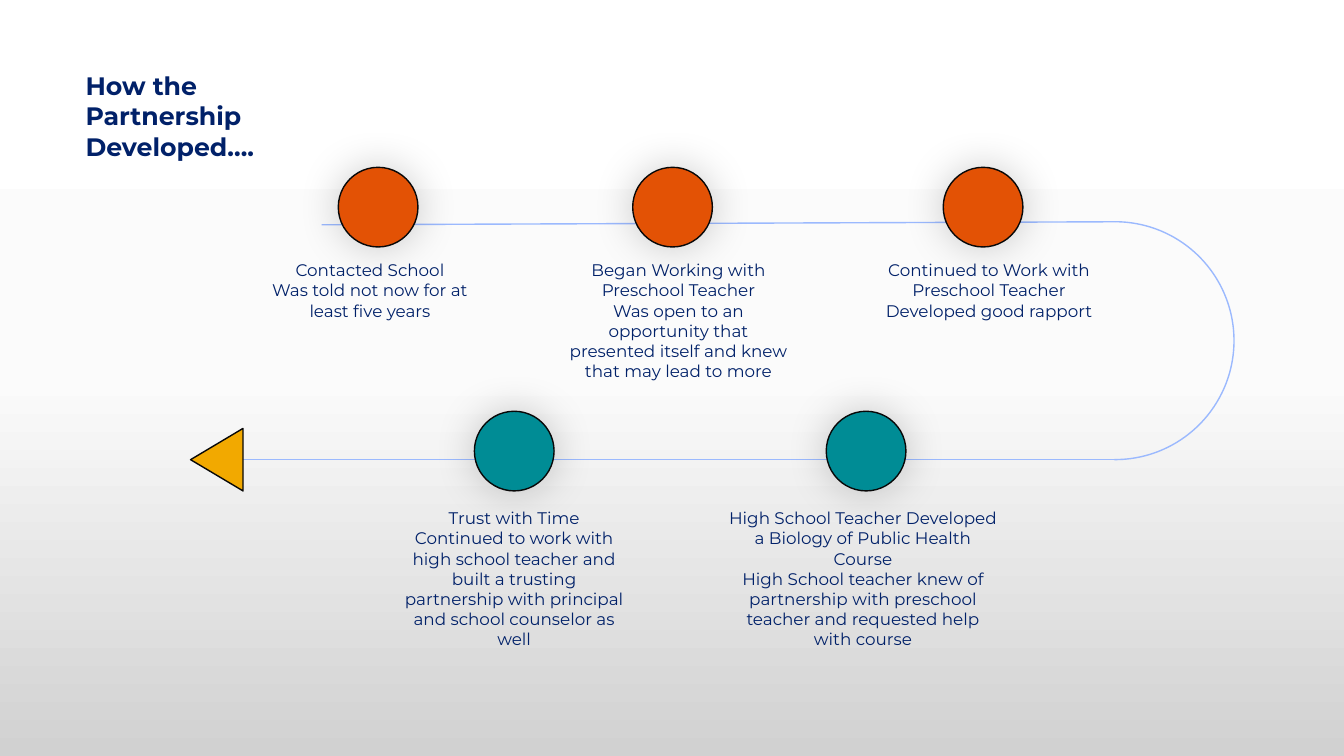
from copy import deepcopy
from lxml import etree
from pptx import Presentation
from pptx.dml.color import RGBColor
from pptx.enum.shapes import MSO_CONNECTOR, MSO_SHAPE
from pptx.enum.text import MSO_AUTO_SIZE, PP_ALIGN
from pptx.oxml.ns import qn
from pptx.util import Inches, Pt

ARC, CIRCLE, TRIANGLE = MSO_SHAPE.ARC, MSO_SHAPE.OVAL, MSO_SHAPE.ISOSCELES_TRIANGLE
STRAIGHT = MSO_CONNECTOR.STRAIGHT
LEFT, CENTER = PP_ALIGN.LEFT, PP_ALIGN.CENTER
FIT_SHAPE = MSO_AUTO_SIZE.SHAPE_TO_FIT_TEXT

# Content
FONT = "Montserrat"
COLORS = {"navy": "012169", "orange": "E35205", "teal": "008C95", "gold": "F2A900",
          "path": "9BB9FE", "outline": "080808", "shadow": "000000"}
BACKGROUND = [(0, "FFFFFF"), (0.5, "FBFBFB"), (1, "D1D1D1")]
TITLE = ["How the", "Partnership", "Developed…."]

# Each row: circle colour, circle top, text top, and its steps.
# Each step: circle centre, text centre, text width, text height, lines
ROWS = [
    ("orange", 1.66, 2.53, [
        (3.75, 3.67, 2.44, 0.91, ["Contacted School",
                                  "Was told not now for at least five years"]),
        (6.67, 6.73, 2.44, 1.31, ["Began Working with Preschool Teacher",
                                  "Was open to an opportunity that presented itself "
                                  "and knew that may lead to more"]),
        (9.75, 9.81, 2.44, 0.71, ["Continued to Work with Preschool Teacher",
                                  "Developed good rapport"]),
    ]),
    ("teal", 4.08, 4.99, [
        (5.1, 5.1, 2.44, 1.51, ["Trust with Time",
                                "Continued to work with high school teacher and built a "
                                "trusting partnership with principal and school "
                                "counselor as well"]),
        (8.59, 8.56, 2.86, 1.51, ["High School Teacher Developed a Biology of Public "
                                  "Health Course",
                                  "High School teacher knew of partnership with preschool "
                                  "teacher and requested help with course"]),
    ]),
]

# Geometry in inches
CIRCLE_SIZE = 0.79
TURN_X, TURN_TOP, TURN_SIZE = 11.06, 2.2, 2.36
TURN_BOTTOM = TURN_TOP + TURN_SIZE
TOP_START = (3.19, 2.23)
ARROW_BASE_X, ARROW_WIDTH, ARROW_HEIGHT = 2.41, 0.62, 0.52

deck = Presentation()
deck.slide_width, deck.slide_height = Inches(13.33), Inches(7.5)
page = deck.slides.add_slide(deck.slide_layouts[6])


def color(name):
    return RGBColor.from_string(COLORS[name])


def add_shape(kind, left, top, width, height, line, fill=None):
    shape = page.shapes.add_shape(kind, Inches(left), Inches(top),
                                  Inches(width), Inches(height))
    shape.shadow.inherit = False
    shape.line.color.rgb = color(line)
    shape.line.width = Pt(1)
    if fill:
        shape.fill.solid()
        shape.fill.fore_color.rgb = color(fill)
    else:
        shape.fill.background()
    return shape


def add_glow_shadow(shape):
    effects = shape.element.spPr.find(qn("a:effectLst"))
    shadow = etree.SubElement(effects, qn("a:outerShdw"), blurRad=str(Pt(30)),
                              dist="0", dir="0", algn="ctr", rotWithShape="0")
    tint = etree.SubElement(shadow, qn("a:srgbClr"), val=COLORS["shadow"])
    etree.SubElement(tint, qn("a:alpha"), val="20000")


def add_line(start, end):
    line = page.shapes.add_connector(STRAIGHT, *map(Inches, start + end))
    line.line.color.rgb = color("path")
    line.line.width = Pt(1)
    etree.SubElement(line.element.spPr, qn("a:effectLst"))


def add_text(left, top, width, height, lines, size, align, bold=False):
    box = page.shapes.add_textbox(Inches(left), Inches(top), Inches(width), Inches(height))
    frame = box.text_frame
    frame.word_wrap = True
    frame.auto_size = FIT_SHAPE
    frame.text = "\n".join(lines)
    for para in frame.paragraphs:
        para.alignment = align
        for span in para.runs:
            span.font.name = FONT
            span.font.size = Pt(size)
            span.font.bold = bold
            span.font.color.rgb = color("navy")


# Background gradient, top to bottom
fill = page.background.fill
fill.gradient()
fill.gradient_angle = 270
stop_list = page.element.find(".//" + qn("a:gsLst"))
stop_list.append(deepcopy(stop_list[-1]))
for stop, (position, shade) in zip(fill.gradient_stops, BACKGROUND):
    stop.position = position
    stop.color.rgb = RGBColor.from_string(shade)

# Winding path
turn = add_shape(ARC, TURN_X - TURN_SIZE / 2, TURN_TOP, TURN_SIZE, TURN_SIZE, "path")
turn.adjustments[0], turn.adjustments[1] = 162, 54.2
add_line(TOP_START, (TURN_X, TURN_TOP))
add_line((ARROW_BASE_X, TURN_BOTTOM), (TURN_X, TURN_BOTTOM))

# Steps
for fill_name, circle_top, text_top, steps in ROWS:
    for circle_x, text_x, width, height, lines in steps:
        add_text(text_x - width / 2, text_top, width, height, lines, 12, CENTER)
        circle = add_shape(CIRCLE, circle_x - CIRCLE_SIZE / 2, circle_top,
                           CIRCLE_SIZE, CIRCLE_SIZE, "outline", fill_name)
        add_glow_shadow(circle)

# Title
add_text(0.75, 0.65, 1.89, 1.01, TITLE, 18, LEFT, bold=True)

# Arrowhead, turned to point left
arrow_x = ARROW_BASE_X - ARROW_HEIGHT / 2
arrow = add_shape(TRIANGLE, arrow_x - ARROW_WIDTH / 2, TURN_BOTTOM - ARROW_HEIGHT / 2,
                  ARROW_WIDTH, ARROW_HEIGHT, "outline", "gold")
arrow.rotation = 270

deck.save("out.pptx")
